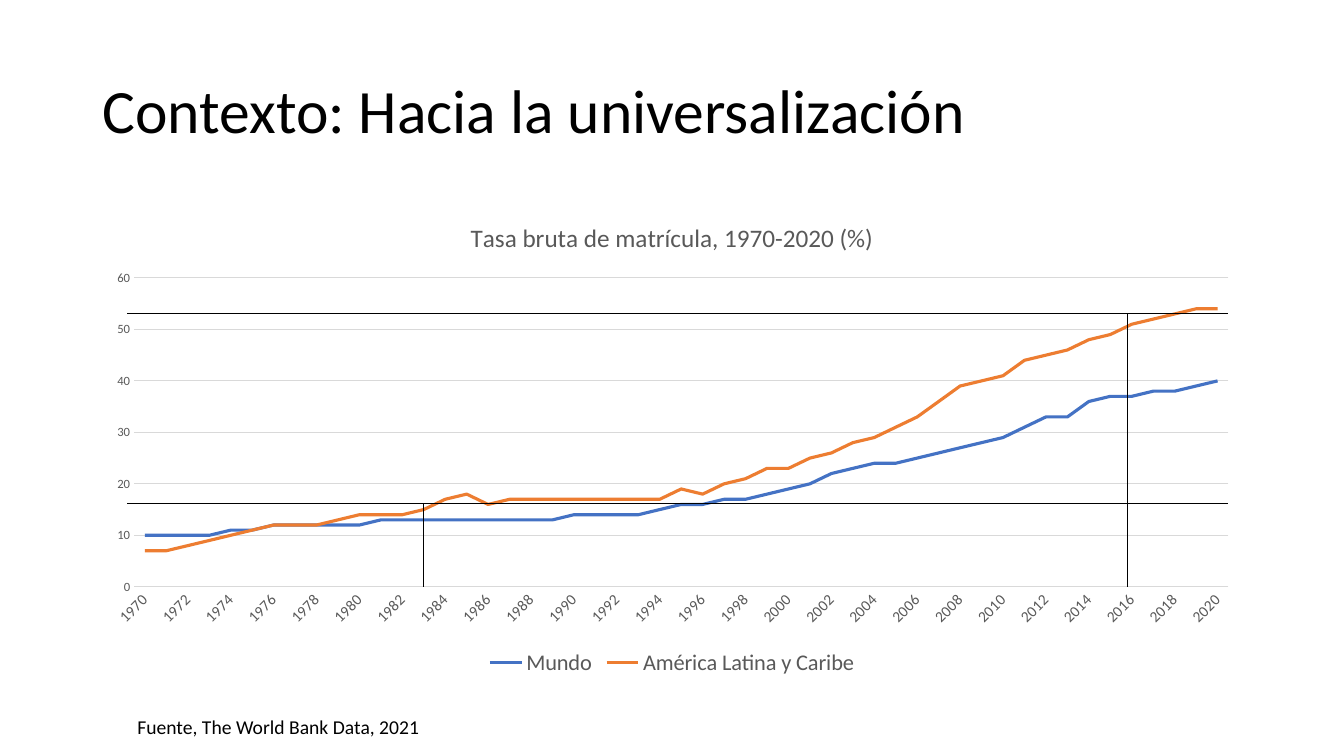
from lxml.etree import SubElement
from pptx import Presentation
from pptx.chart.data import CategoryChartData
from pptx.dml.color import RGBColor
from pptx.enum.chart import XL_CHART_TYPE, XL_LEGEND_POSITION, XL_TICK_MARK
from pptx.enum.shapes import MSO_CONNECTOR
from pptx.enum.text import MSO_ANCHOR
from pptx.oxml import parse_xml
from pptx.oxml.ns import nsdecls, qn
from pptx.util import Pt

COLORS = {"black": "000000", "grey": "595959", "grid": "D9D9D9",
          "Mundo": "4472C4", "América Latina y Caribe": "ED7D31"}
ENROLMENT = {
    "Mundo": [
        10, 10, 10, 10, 11, 11, 12, 12, 12, 12, 12, 13, 13, 13, 13, 13, 13,
        13, 13, 13, 14, 14, 14, 14, 15, 16, 16, 17, 17, 18, 19, 20, 22, 23,
        24, 24, 25, 26, 27, 28, 29, 31, 33, 33, 36, 37, 37, 38, 38, 39, 40],
    "América Latina y Caribe": [
        7, 7, 8, 9, 10, 11, 12, 12, 12, 13, 14, 14, 14, 15, 17, 18, 16,
        17, 17, 17, 17, 17, 17, 17, 17, 19, 18, 20, 21, 23, 23, 25, 26, 28,
        29, 31, 33, 36, 39, 40, 41, 44, 45, 46, 48, 49, 51, 52, 53, 54, 54],
}


def style_font(font, size, color):
    for name, value in {"name": "Calibri", "size": Pt(size), "bold": False}.items():
        setattr(font, name, value)
    font.color.rgb = RGBColor.from_string(COLORS[color])


def style_line(line, width, color):
    line.width = Pt(width)
    line.color.rgb = RGBColor.from_string(COLORS[color])


deck = Presentation()
deck.slide_width, deck.slide_height = Pt(960), Pt(540)
page = deck.slides.add_slide(deck.slide_layouts[6])

# Title
title_box = page.shapes.add_textbox(Pt(66), Pt(28.75), Pt(828), Pt(104.4))
title_box.text_frame.word_wrap = True
title_box.text_frame.vertical_anchor = MSO_ANCHOR.MIDDLE
para = title_box.text_frame.paragraphs[0]
para.line_spacing = 0.9
span = para.add_run()
span.text = "Contexto: Hacia la universalización"
style_font(span.font, 44, "black")

# Line chart
data = CategoryChartData()
data.categories = [str(year) for year in range(1970, 2021)]
for name, values in ENROLMENT.items():
    data.add_series(name, values)
chart = page.shapes.add_chart(XL_CHART_TYPE.LINE, Pt(66), Pt(143.75),
                              Pt(828), Pt(342.7), data).chart
style_font(chart.font, 10, "black")
chart.plots[0].vary_by_categories = False
for series in chart.plots[0].series:
    series.smooth = False
    style_line(series.format.line, 2.25, series.name)

# Chart title and legend
chart.has_title = True
para = chart.chart_title.text_frame.paragraphs[0]
span = para.add_run()
span.text = "Tasa bruta de matrícula, 1970-2020 (%)"
style_font(span.font, 18, "grey")
chart.chart_title.include_in_layout = False
chart.has_legend = True
chart.legend.position = XL_LEGEND_POSITION.BOTTOM
chart.legend.include_in_layout = False
style_font(chart.legend.font, 16, "grey")

# Axes
years, rates = chart.category_axis, chart.value_axis
for axis, size in ((years, 11), (rates, 9)):
    axis.major_tick_mark = axis.minor_tick_mark = XL_TICK_MARK.NONE
    style_font(axis.tick_labels.font, size, "grey")
style_line(years.format.line, 0.75, "grid")
rates.format.line.fill.background()
style_line(rates.major_gridlines.format.line, 0.75, "grid")
for name, value in {"minimum_scale": 0, "maximum_scale": 60, "major_unit": 10}.items():
    setattr(rates, name, value)

# Slanted label on every second year
years_xml = chart.element.find(".//" + qn("c:catAx"))
years_xml.find(qn("c:txPr")).find(qn("a:bodyPr")).set("rot", "-2700000")
years_xml.find(qn("c:noMultiLvlLbl")).addprevious(
    parse_xml(f'<c:tickLblSkip {nsdecls("c")} val="2"/>'))

# Fixed plot area
plot_area = chart.element.find(".//" + qn("c:plotArea"))
for layout in plot_area.findall(qn("c:layout")):
    plot_area.remove(layout)
layout = parse_xml(f'<c:layout {nsdecls("c")}/>')
manual = SubElement(layout, qn("c:manualLayout"))
for tag, value in {"layoutTarget": "inner", "xMode": "edge", "yMode": "edge",
                   "x": "0.036", "y": "0.16", "w": "0.944", "h": "0.644"}.items():
    SubElement(manual, qn("c:" + tag)).set("val", value)
plot_area.insert(0, layout)

# Reference lines: each level across the chart, with a drop to its year
left, right, base = 91, 877, 419
for level, year in ((359.5, 302.5), (224, 805.5)):
    for ends in ((left, level, right, level), (year, base, year, level)):
        line = page.shapes.add_connector(MSO_CONNECTOR.STRAIGHT, *map(Pt, ends))
        style_line(line.line, 0.5, "black")
        SubElement(line.element.spPr, qn("a:effectLst"))

# Source
source_box = page.shapes.add_textbox(Pt(91), Pt(507), Pt(218), Pt(24.25))
source_box.text_frame.word_wrap = False
span = source_box.text_frame.paragraphs[0].add_run()
span.text = "Fuente, The World Bank Data, 2021"
style_font(span.font, 14, "black")

deck.save("out.pptx")
